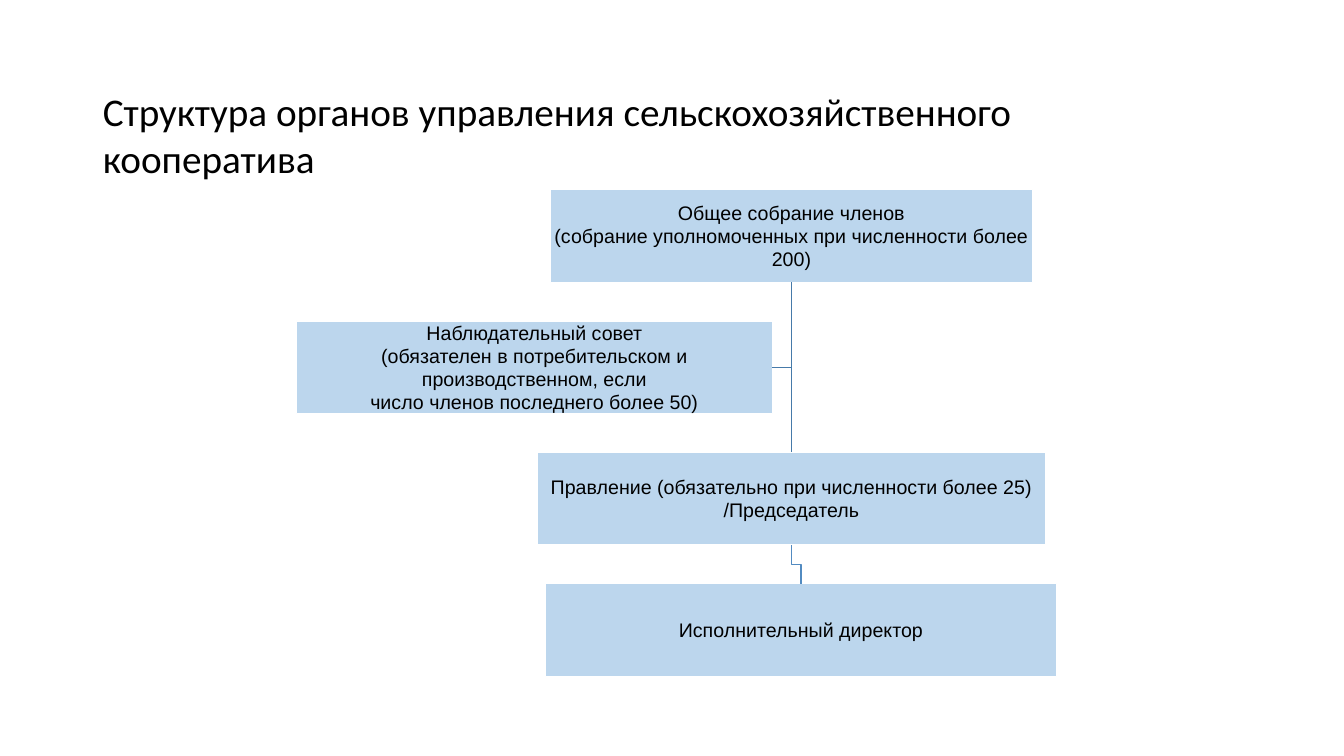
from dataclasses import dataclass

from lxml import etree
from pptx import Presentation
from pptx.dml.color import RGBColor
from pptx.enum.shapes import MSO_CONNECTOR, MSO_SHAPE
from pptx.enum.text import MSO_ANCHOR, PP_ALIGN
from pptx.oxml.ns import qn
from pptx.util import Inches, Pt

RECT = MSO_SHAPE.RECTANGLE
LINE = MSO_CONNECTOR.STRAIGHT
TOP, MIDDLE = MSO_ANCHOR.TOP, MSO_ANCHOR.MIDDLE
LEFT, CENTER = PP_ALIGN.LEFT, PP_ALIGN.CENTER


@dataclass(frozen=True)
class Theme:
    ink: str = "000000"
    fill: str = "BCD6ED"
    edge: str = "FFFFFF"
    link: str = "467AA9"
    step: str = "528BC1"
    head: str = "Calibri"
    body: str = "Arial"
    large: float = 28
    small: float = 14
    lead: float = 16.5
    width: float = 0.96


THEME = Theme()
WIDE, HIGH = 13.33, 7.5
ROW_TOP, ROW_STEP, ROW_HIGH = 1.88, 1.303, 0.92

TITLE = "Структура органов управления сельскохозяйственного кооператива"
UNITS = {
    "meeting": (0, 5.46, 4.78,
                "Общее собрание членов\n"
                "(собрание уполномоченных при численности более\v200)"),
    "council": (1, 2.94, 4.72,
                "Наблюдательный совет\v(обязателен в потребительском и\v"
                "производственном, если\nчисло членов последнего более 50)"),
    "board": (2, 5.33, 5.04,
              "Правление (обязательно при численности более 25)\n/Председатель"),
    "director": (3, 5.41, 5.07, "Исполнительный директор"),
}


def assign(item, values):
    for name, value in values.items():
        setattr(item, name, value)


def write(shape, text, face, size, anchor, align, lead=None):
    frame = shape.text_frame
    frame.text = text
    assign(frame, dict(word_wrap=True, vertical_anchor=anchor, margin_left=0,
                       margin_right=0, margin_top=0, margin_bottom=0))
    for para in frame.paragraphs:
        assign(para, dict(alignment=align, line_spacing=lead))
        for run in para.runs:
            assign(run.font, dict(name=face, size=Pt(size)))
            run.font.color.rgb = RGBColor.from_string(THEME.ink)


def stroke(shape, color):
    shape.line.color.rgb = RGBColor.from_string(color)
    shape.line.width = Pt(THEME.width)


def title(slide, box):
    shape = slide.shapes.add_textbox(*map(Inches, box))
    write(shape, TITLE, THEME.head, THEME.large, TOP, LEFT)


def unit(slide, box, text):
    shape = slide.shapes.add_shape(RECT, *map(Inches, box))
    shape.shadow.inherit = False
    shape.fill.solid()
    shape.fill.fore_color.rgb = RGBColor.from_string(THEME.fill)
    stroke(shape, THEME.edge)
    write(shape, text, THEME.body, THEME.small, MIDDLE, CENTER, Pt(THEME.lead))
    return shape


def bend(slide, points, color):
    build = slide.shapes.build_freeform(*points[0])
    build.add_line_segments(points[1:], close=False)
    shape = build.convert_to_shape()
    shape.shadow.inherit = False
    shape.fill.background()
    stroke(shape, color)


def join(slide, start, end):
    link = slide.shapes.add_connector(LINE, 0, 0, 0, 0)
    link.begin_connect(start, 2)
    link.end_connect(end, 0)
    stroke(link, THEME.link)
    etree.SubElement(link._element.spPr, qn("a:effectLst"))


def chart(slide, top):
    nodes = {}
    for name, (row, left, width, text) in UNITS.items():
        box = (left, top + row * ROW_STEP, width, ROW_HIGH)
        nodes[name] = unit(slide, box, text)
    meeting, council, board, director = nodes.values()
    join(slide, meeting, board)

    stem = meeting.left + meeting.width // 2
    side = council.top + council.height // 2
    bend(slide, [(stem, meeting.top + meeting.height), (stem, side),
                 (council.left + council.width, side)], THEME.link)

    stem = board.left + board.width // 2
    foot = board.top + board.height
    goal = director.left + director.width // 2
    half = (foot + director.top) // 2
    bend(slide, [(stem, foot), (stem, half), (goal, half),
                 (goal, director.top)], THEME.step)


def main():
    deck = Presentation()
    assign(deck, dict(slide_width=Inches(WIDE), slide_height=Inches(HIGH)))
    slide = deck.slides.add_slide(deck.slide_layouts[6])
    title(slide, (1.02, 0.87, 11, 0.95))
    chart(slide, ROW_TOP)
    deck.save("out.pptx")


if __name__ == "__main__":
    main()
